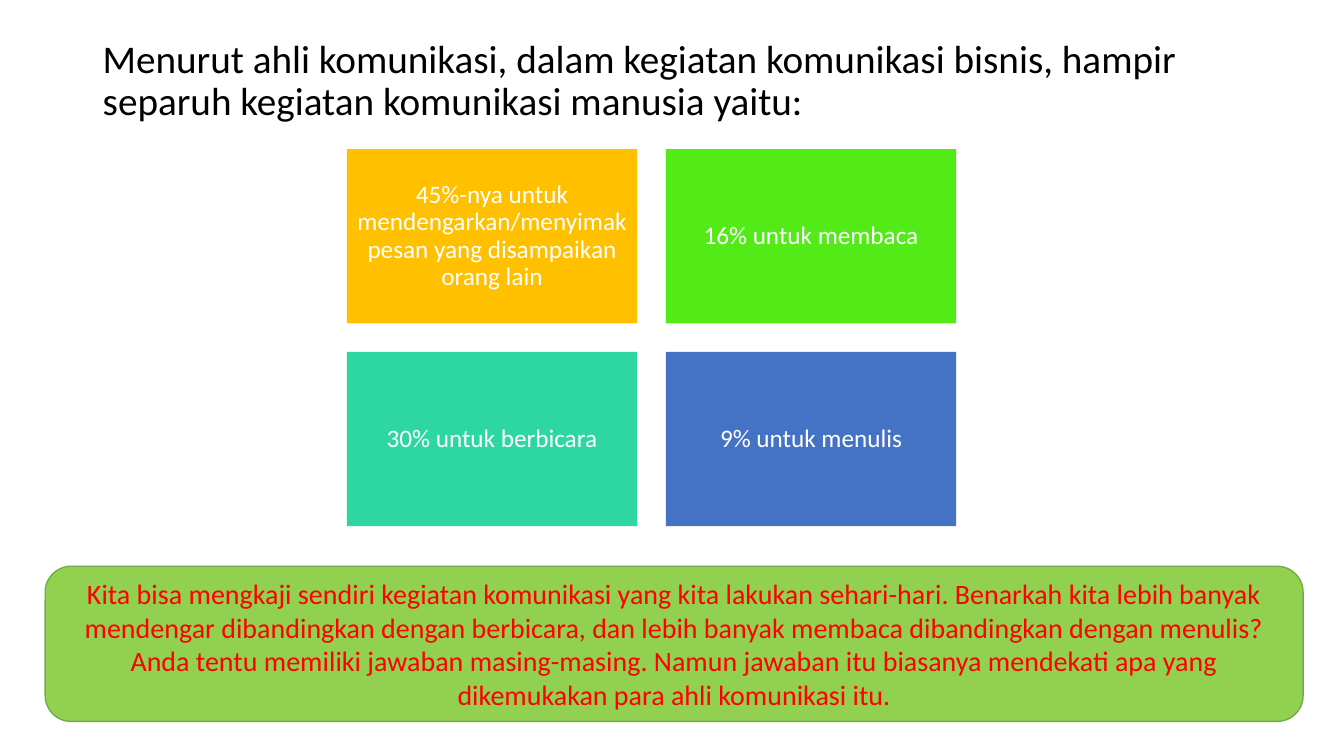
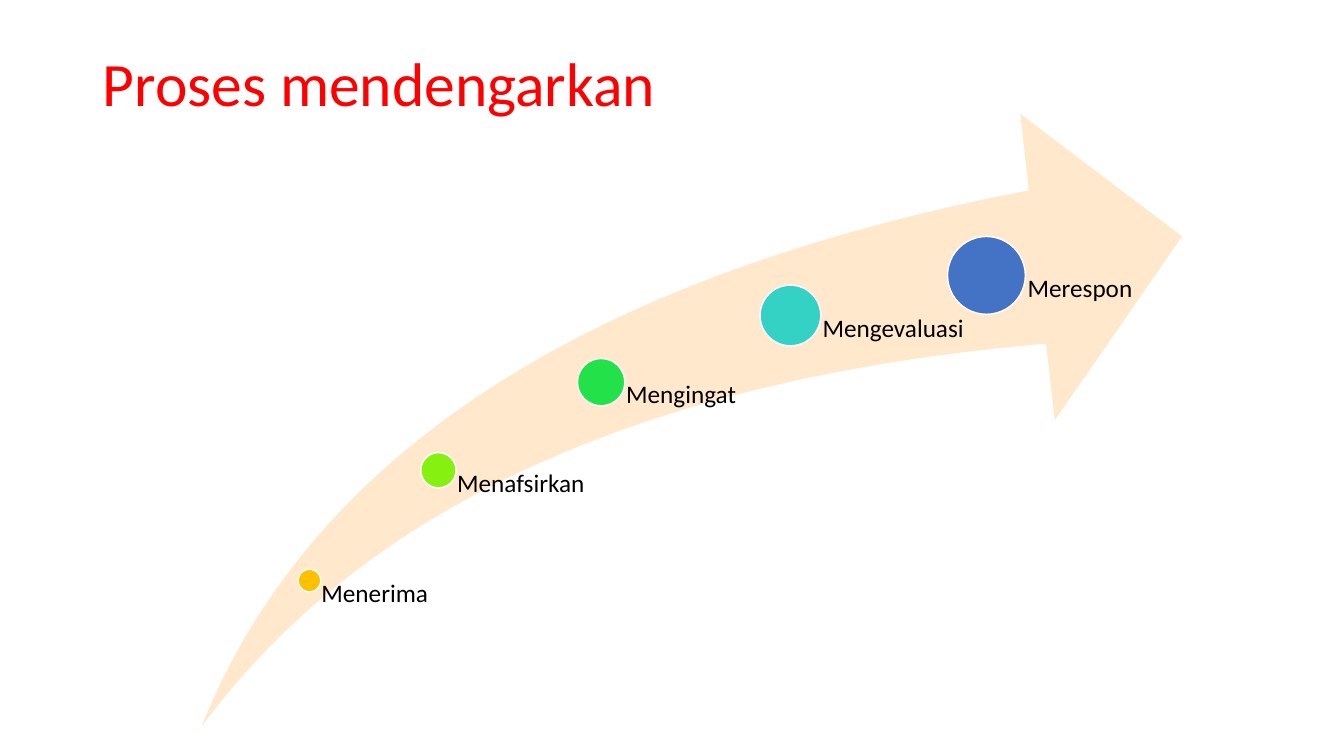
"""Build two slides on listening in business communication."""
import pptx
import pptx.dml.color
import pptx.enum.shapes
import pptx.enum.text
import pptx.util

Cm = pptx.util.Cm
SHAPE = pptx.enum.shapes.MSO_SHAPE
ALIGN = pptx.enum.text.PP_ALIGN
ANCHOR = pptx.enum.text.MSO_ANCHOR


def color(value):
    return pptx.dml.color.RGBColor.from_string(value)


def write_text(frame, text, size=18, ink="000000", align=ALIGN.LEFT,
               anchor=ANCHOR.TOP, spacing=0.9, insets=(0.25, 0.13, 0.25, 0.13)):
    frame.word_wrap = True
    frame.vertical_anchor = anchor
    frame.margin_left, frame.margin_top, frame.margin_right, frame.margin_bottom = map(Cm, insets)
    para = frame.paragraphs[0]
    para.alignment = align
    para.line_spacing = spacing
    span = para.add_run()
    span.text = text
    span.font.name = Slides.font
    span.font.size = pptx.util.Pt(size)
    span.font.color.rgb = color(ink)


class Slides:
    font = "Calibri"
    black, white, red, amber, blue = "000000", "FFFFFF", "FF0000", "FFC000", "4472C4"
    title_left, title_width = 2.34, 29.21

    def __init__(self):
        self.deck = pptx.Presentation()
        self.deck.slide_width, self.deck.slide_height = Cm(33.87), Cm(19.05)
        self.page = None

    def add_page(self):
        self.page = self.deck.slides.add_slide(self.deck.slide_layouts[6])

    def add_text(self, text, left, top, width, height, **style):
        box = self.page.shapes.add_textbox(Cm(left), Cm(top), Cm(width), Cm(height))
        write_text(box.text_frame, text, **style)

    def add_title(self, text, top, height, **style):
        self.add_text(text, self.title_left, top, self.title_width, height, **style)

    def add_shape(self, kind, left, top, width, height, fill, line=None):
        shape = self.page.shapes.add_shape(kind, Cm(left), Cm(top), Cm(width), Cm(height))
        shape.shadow.inherit = False
        shape.fill.solid()
        shape.fill.fore_color.rgb = color(fill)
        if line:
            shape.line.color.rgb = color(line)
            shape.line.width = pptx.util.Pt(1)
        else:
            shape.line.fill.background()
        return shape

    def add_tile(self, text, left, top, width, height, fill):
        tile = self.add_shape(SHAPE.RECTANGLE, left, top, width, height, fill)
        write_text(tile.text_frame, text, ink=self.white, align=ALIGN.CENTER,
                   anchor=ANCHOR.MIDDLE, insets=(0.18,) * 4)

    def add_callout(self, text, left, top, width, height):
        callout = self.add_shape(SHAPE.ROUNDED_RECTANGLE, left, top, width, height,
                                 "92D050", line="70AD47")
        write_text(callout.text_frame, text, size=20, ink=self.red, align=ALIGN.CENTER,
                   anchor=ANCHOR.MIDDLE, spacing=1.0)

    def add_step(self, text, center_x, center_y, diameter, fill):
        radius = diameter / 2
        self.add_shape(SHAPE.OVAL, center_x - radius, center_y - radius,
                       diameter, diameter, fill, line=self.white)
        self.add_text(text, center_x, center_y, 5, 1, insets=(0.53 * diameter, 0, 0, 0))


def build_shares(slides):
    slides.add_page()
    slides.add_title("Menurut ahli komunikasi, dalam kegiatan komunikasi bisnis, hampir "
                     "separuh kegiatan komunikasi manusia yaitu:", 0.86, 2.5, size=28)
    tiles = [
        ("45%-nya untuk mendengarkan/menyimak pesan yang disampaikan orang lain", slides.amber),
        ("16% untuk membaca", "53EB17"),
        ("30% untuk berbicara", "2ED7A1"),
        ("9% untuk menulis", slides.blue),
    ]
    width, height, gap = 7.32, 4.39, 0.72
    for index, (text, fill) in enumerate(tiles):
        row, column = divmod(index, 2)
        slides.add_tile(text, 8.74 + column * (width + gap), 3.76 + row * (height + gap),
                        width, height, fill)
    slides.add_callout(
        "Kita bisa mengkaji sendiri kegiatan komunikasi yang kita lakukan sehari-hari. "
        "Benarkah kita lebih banyak mendengar dibandingkan dengan berbicara, dan lebih banyak "
        "membaca dibandingkan dengan menulis? Anda tentu memiliki jawaban masing-masing. "
        "Namun jawaban itu biasanya mendekati apa yang dikemukakan para ahli komunikasi itu.",
        1.14, 14.27, 31.7, 3.91)


def build_process(slides):
    slides.add_page()
    slides.add_title("Proses mendengarkan", 1.02, 2.31, size=44, ink=slides.red,
                     anchor=ANCHOR.MIDDLE)
    arrow = slides.add_shape(SHAPE.SWOOSH_ARROW, 5.08, 2.87, 24.71, 15.44, "FFE8CC")
    arrow.adjustments[0] = arrow.adjustments[1] = 0.25
    steps = [
        ("Menerima", 7.8, 14.63, 0.57, slides.amber),
        ("Menafsirkan", 11.05, 11.85, 0.89, "86F011"),
        ("Mengingat", 15.15, 9.63, 1.19, "23E148"),
        ("Mengevaluasi", 19.92, 7.95, 1.53, "33D2C5"),
        ("Merespon", 24.86, 6.94, 1.96, slides.blue),
    ]
    for step in steps:
        slides.add_step(*step)


def main():
    slides = Slides()
    build_shares(slides)
    build_process(slides)
    slides.deck.save("out.pptx")


if __name__ == "__main__":
    main()
